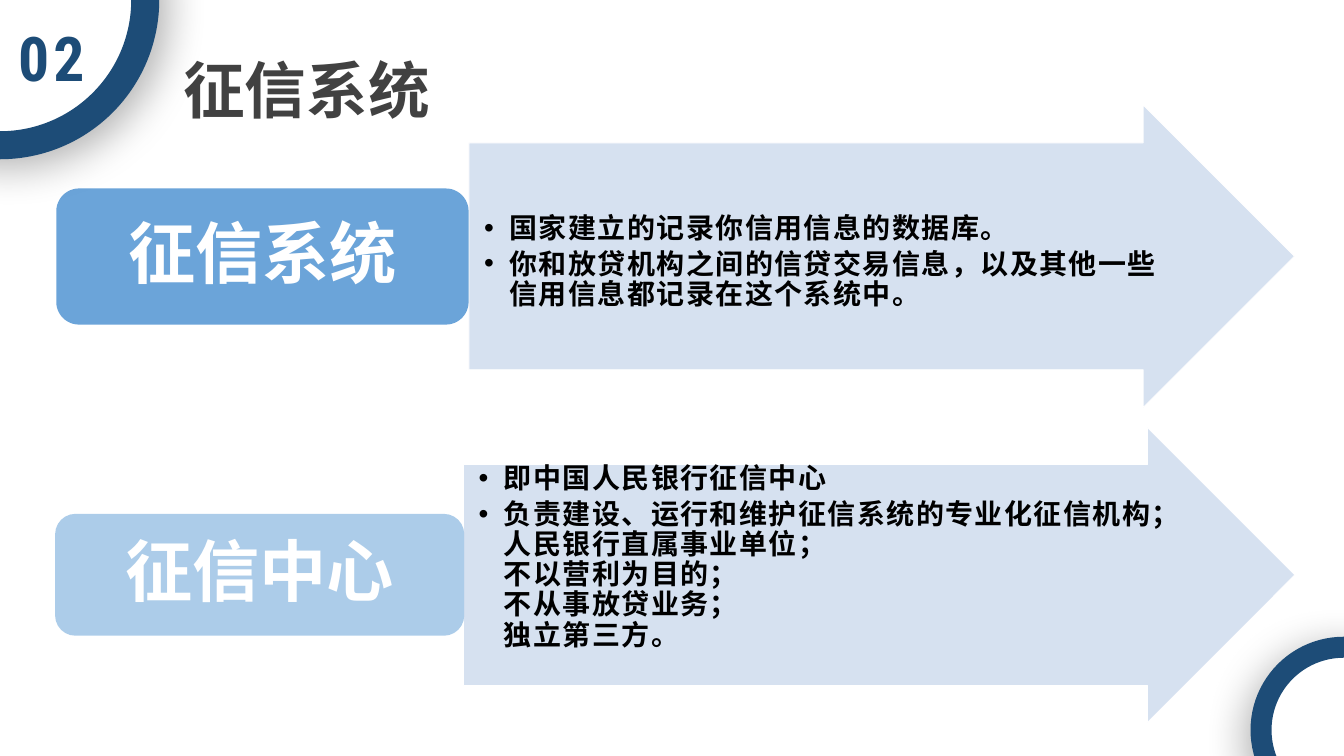
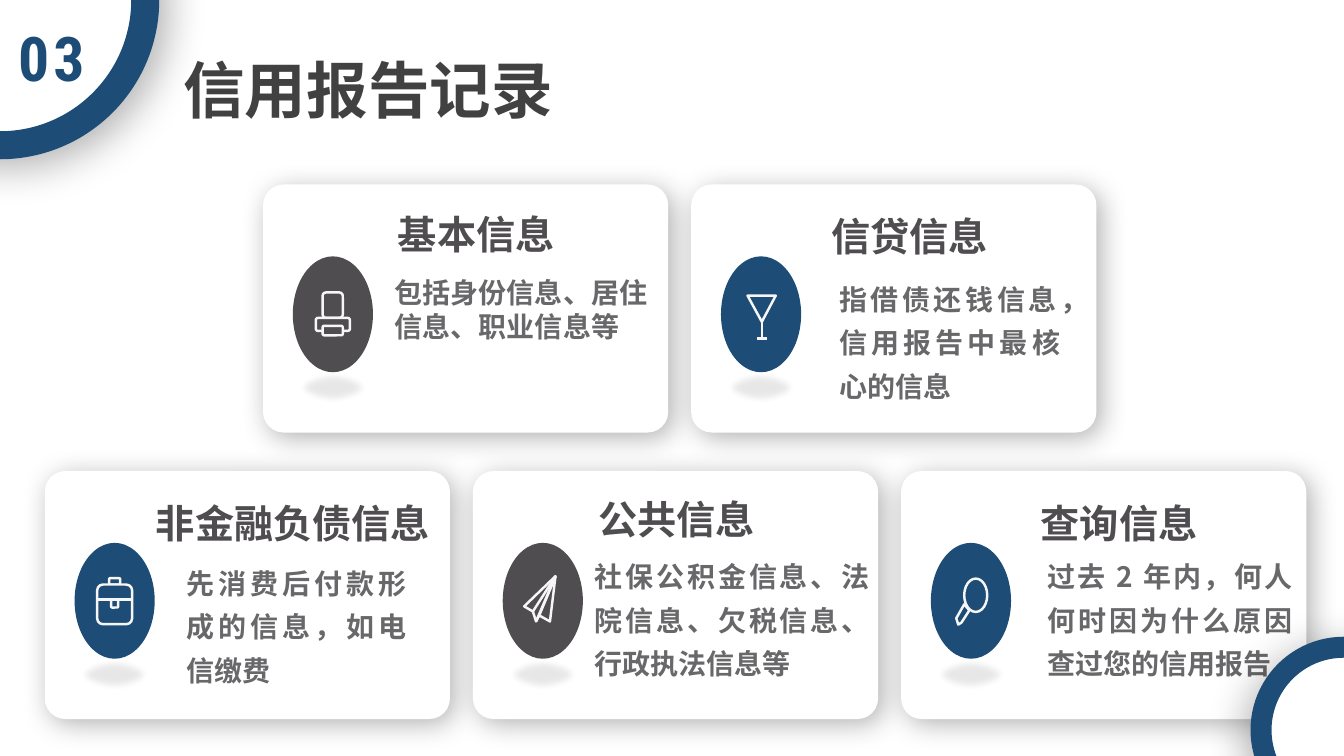
from pptx import Presentation
from pptx.dml.color import RGBColor
from pptx.enum.shapes import MSO_CONNECTOR as Link, MSO_SHAPE as Preset
from pptx.enum.text import MSO_ANCHOR as Anchor, PP_ALIGN as Align
from pptx.oxml.ns import qn
from pptx.util import Cm, Pt
from lxml.etree import SubElement

NAVY, GREY, WHITE = "1D4C77", "4F4D50", "FFFFFF"
HEADING, BODY = "414141", "686769"
ARROW, LABEL, ICON = "D2DEEF", "5B9BD5", "F6F6F6"
LATIN, CJK, DIGITS = "Calibri", "Noto Sans CJK SC", "Roboto Condensed"
RING_SHADOW = dict(opacity=30, blur=30, distance=8)
CARD_SHADOW = dict(opacity=30, blur=20, distance=5, angle=45)


def color(code):
    return RGBColor.from_string(code)


def write(para, text, *, size, hue, font=LATIN, align=None, leading=None,
          after=None, tracking=None, bullet=False):
    """Fill one paragraph; a newline in the text becomes a line break."""
    if bullet:
        props = para._p.get_or_add_pPr()
        props.set("marL", str(Cm(0.99)))
        props.set("indent", str(Cm(-0.64)))
        SubElement(props, qn("a:buFont")).set("typeface", "Arial")
        SubElement(props, qn("a:buChar")).set("char", "•")
    if align is not None:
        para.alignment = align
    if leading:
        para.line_spacing = leading
    if after:
        para.space_after = Pt(after)
    for index, line in enumerate(text.split("\n")):
        if index:
            para.add_line_break()
        span = para.add_run()
        span.text = line
        span.font.name, span.font.size, span.font.bold = font, Pt(size), True
        span.font.color.rgb = color(hue)
        if tracking:
            span._r.get_or_add_rPr().set("spc", str(tracking * 100))


class Deck:
    def __init__(self):
        self.deck = Presentation()
        self.deck.slide_width, self.deck.slide_height = Cm(33.87), Cm(19.05)
        self.page = None

    def new_page(self):
        self.page = self.deck.slides.add_slide(self.deck.slide_layouts[6])

    # Shapes and lines
    def paint(self, shape, fill, opacity=100, line=None, weight=1):
        shape.shadow.inherit = False
        if fill:
            shape.fill.solid()
            shape.fill.fore_color.rgb = color(fill)
            if opacity < 100:
                tint = shape._element.spPr.find(qn("a:solidFill"))[0]
                SubElement(tint, qn("a:alpha")).set("val", str(opacity * 1000))
        else:
            shape.fill.background()
        if line:
            shape.line.color.rgb = color(line)
            shape.line.width = Pt(weight)
        else:
            shape.line.fill.background()
        return shape

    def shape(self, preset, place, fill, adjust=(), **style):
        shape = self.page.shapes.add_shape(preset, *map(Cm, place))
        for index, value in enumerate(adjust):
            shape.adjustments[index] = value
        return self.paint(shape, fill, **style)

    def polygon(self, points, line, weight):
        points = [(Cm(x), Cm(y)) for x, y in points]
        builder = self.page.shapes.build_freeform(*points[0])
        builder.add_line_segments(points[1:], close=True)
        return self.paint(builder.convert_to_shape(), None,
                          line=line, weight=weight)

    def line(self, start, end, hue, weight):
        link = self.page.shapes.add_connector(
            Link.STRAIGHT, *map(Cm, (*start, *end)))
        link.line.color.rgb = color(hue)
        link.line.width = Pt(weight)
        SubElement(link._element.spPr, qn("a:effectLst"))

    def shadow(self, shape, opacity, blur, distance, angle):
        effects = shape._element.spPr.find(qn("a:effectLst"))
        outer = SubElement(effects, qn("a:outerShdw"), blurRad=str(Pt(blur)),
                           dist=str(Pt(distance)), dir=str(angle * 60000),
                           algn="ctr", rotWithShape="0")
        black = SubElement(outer, qn("a:srgbClr"), val="000000")
        SubElement(black, qn("a:alpha")).set("val", str(opacity * 1000))

    # Text
    def text(self, place, *paragraphs, wrap=True, inset=None, **style):
        box = self.page.shapes.add_textbox(*map(Cm, place))
        frame = box.text_frame
        frame.word_wrap = wrap
        if inset is not None:
            frame.margin_left = frame.margin_right = Cm(inset)
            frame.margin_top = frame.margin_bottom = Cm(inset)
        for index, text in enumerate(paragraphs):
            para = frame.add_paragraph() if index else frame.paragraphs[0]
            write(para, text, **style)

    # Corner rings, number and title
    def frame(self, number, title, title_width):
        for place, weight, angle in (((-3.66, -3.66, 7.32, 7.32), 20, 45),
                                     ((31.78, 16.31, 4.17, 4.17), 15, 125)):
            ring = self.shape(Preset.OVAL, place, WHITE,
                              line=NAVY, weight=weight)
            self.shadow(ring, angle=angle, **RING_SHADOW)
        self.text((0, 0.38, 2.59, 2.13), number, size=44, hue=NAVY,
                  font=DIGITS, align=Align.CENTER, tracking=3)
        self.text((4.37, 1.19, title_width, 2.13), title, wrap=False,
                  size=44, hue=HEADING)

    # Label with an arrow of bullet points
    def arrow_row(self, arrow, label, opacity, name, text_top, points):
        left, top, width, height = arrow
        self.shape(Preset.RIGHT_ARROW, arrow, ARROW, (0.75, 0.5),
                   opacity=90, line=WHITE, weight=0.5)
        self.text((left, text_top, width - height * 3 / 8, 4.6), *points,
                  inset=0.03, size=20, hue="000000", leading=0.9, after=3.6,
                  tracking=1, bullet=True)
        tag = self.shape(Preset.ROUNDED_RECTANGLE, label, LABEL,
                         opacity=opacity)
        tag.text_frame.vertical_anchor = Anchor.MIDDLE
        write(tag.text_frame.paragraphs[0], name, size=48, hue=WHITE,
              align=Align.CENTER, leading=0.9)

    # Card with a round badge
    def card(self, left, top, hue, icon, title, title_place, body,
             body_place, **body_style):
        panel = self.shape(Preset.ROUNDED_RECTANGLE, (left, top, 10.21, 6.25),
                           WHITE, (0.083,))
        self.shadow(panel, **CARD_SHADOW)
        x, y = left + 1.76, top + 3.27
        glow = self.shape(Preset.OVAL, (x - 1, y + 1.4, 2, 0.9), "000000",
                          opacity=10)
        SubElement(glow._element.spPr.find(qn("a:effectLst")),
                   qn("a:softEdge")).set("rad", str(Pt(5)))
        self.shape(Preset.OVAL, (x - 1.01, y - 1.46, 2.02, 2.92), hue)
        self.icon(icon, x, y, hue)
        self.text(title_place, title, size=28, hue=GREY, font=CJK, leading=1.3)
        self.text(body_place, body, size=20, hue=BODY, font=CJK, **body_style)

    def icon(self, parts, x, y, hue):
        """Draw outline parts around the badge centre."""
        for kind, *numbers in parts:
            if kind == "polygon":
                self.polygon([(x + a, y + b) for a, b in numbers], ICON, 1.75)
            elif kind == "line":
                (a, b), (c, d) = numbers
                self.line((x + a, y + b), (x + c, y + d), ICON, 1.75)
            else:
                a, b, width, height = numbers
                self.shape(kind, (x + a, y + b, width, height), hue,
                           line=ICON, weight=1.75)


ROUND = Preset.ROUNDED_RECTANGLE
PRINTER = [(ROUND, -0.26, -0.55, 0.51, 0.64), (ROUND, -0.43, 0.09, 0.86, 0.33),
           (ROUND, -0.26, 0.29, 0.51, 0.24)]
GLASS = [("polygon", (-0.34, -0.47), (0.37, -0.47), (0.02, 0.19)),
         ("line", (0.02, 0.19), (0.02, 0.61)),
         ("line", (-0.11, 0.61), (0.16, 0.61))]
BRIEFCASE = [(ROUND, -0.14, -0.57, 0.28, 0.16), (ROUND, -0.44, -0.41, 0.88, 1),
             ("line", (-0.44, -0.03), (0.44, -0.03)),
             (ROUND, -0.09, -0.03, 0.18, 0.2)]
TIP = (0.32, -0.62)
FOLDS = [(-0.25, 0.27), (-0.17, 0.52), (-0.09, 0.37)]
PLANE = [("polygon", TIP, (-0.47, 0.14), *FOLDS, (0.18, 0.52)),
         *(("line", TIP, fold) for fold in FOLDS)]
MAGNIFIER = [(Preset.OVAL, -0.17, -0.56, 0.58, 0.84),
             ("polygon", (-0.17, 0.09), (-0.37, 0.44), (-0.32, 0.6),
              (-0.24, 0.55), (-0.04, 0.24))]


def credit_system(deck):
    deck.new_page()
    deck.arrow_row((11.82, 2.65, 20.8, 7.62), (1.42, 4.75, 10.39, 3.43), 90,
                   "征信系统", 5.38,
                   ["国家建立的记录你信用信息的数据库。",
                    "你和放贷机构之间的信贷交易信息，以及其他一些"
                    "信用信息都记录在这个系统中。"])
    deck.arrow_row((11.68, 10.78, 20.95, 7.42), (1.39, 12.95, 10.31, 3.07), 50,
                   "征信中心", 11.68,
                   ["即中国人民银行征信中心",
                    "负责建设、运行和维护征信系统的专业化征信机构；\n"
                    "人民银行直属事业单位；\n不以营利为目的；\n"
                    "不从事放贷业务；\n独立第三方。"])
    deck.frame("02", "征信系统", 6.81)


def report_records(deck):
    deck.new_page()
    upper, lower, pitch = 4.65, 11.87, 10.79
    first_upper, first_lower = 6.63, 1.13
    spread = dict(align=Align.JUSTIFY, leading=1.3)
    deck.card(first_upper, upper, GREY, PRINTER,
              "基本信息", (9.78, 4.83, 5.28, 1.8),
              "包括身份信息、居住信息、职业信息等", (9.7, 6.83, 6.93, 2.82))
    deck.card(first_upper + pitch, upper, NAVY, GLASS,
              "信贷信息", (20.7, 4.88, 6.73, 1.8),
              "指借债还钱信息，信用报告中最核心的信息",
              (20.9, 6.73, 6.07, 3.58), **spread)
    deck.card(first_lower, lower, NAVY, BRIEFCASE,
              "非金融负债信息", (3.68, 12.09, 8.03, 1.8),
              "先消费后付款形成的信息，如电信缴费",
              (4.45, 13.89, 6.05, 3.58), **spread)
    deck.card(first_lower + pitch, lower, GREY, PLANE,
              "公共信息", (14.83, 11.99, 6.05, 1.8),
              "社保公积金信息、法院信息、欠税信息、行政执法信息等",
              (14.73, 13.72, 7.44, 3.45), **spread)
    deck.card(first_lower + 2 * pitch, lower, NAVY, MAGNIFIER,
              "查询信息", (25.98, 12.09, 6.05, 1.8),
              "过去 2 年内，何人何时因为什么原因查过您的信用报告",
              (26.14, 13.72, 6.68, 3.45), **spread)
    deck.frame("03", "信用报告记录", 9.93)


def main():
    deck = Deck()
    credit_system(deck)
    report_records(deck)
    deck.deck.save("out.pptx")


if __name__ == "__main__":
    main()
